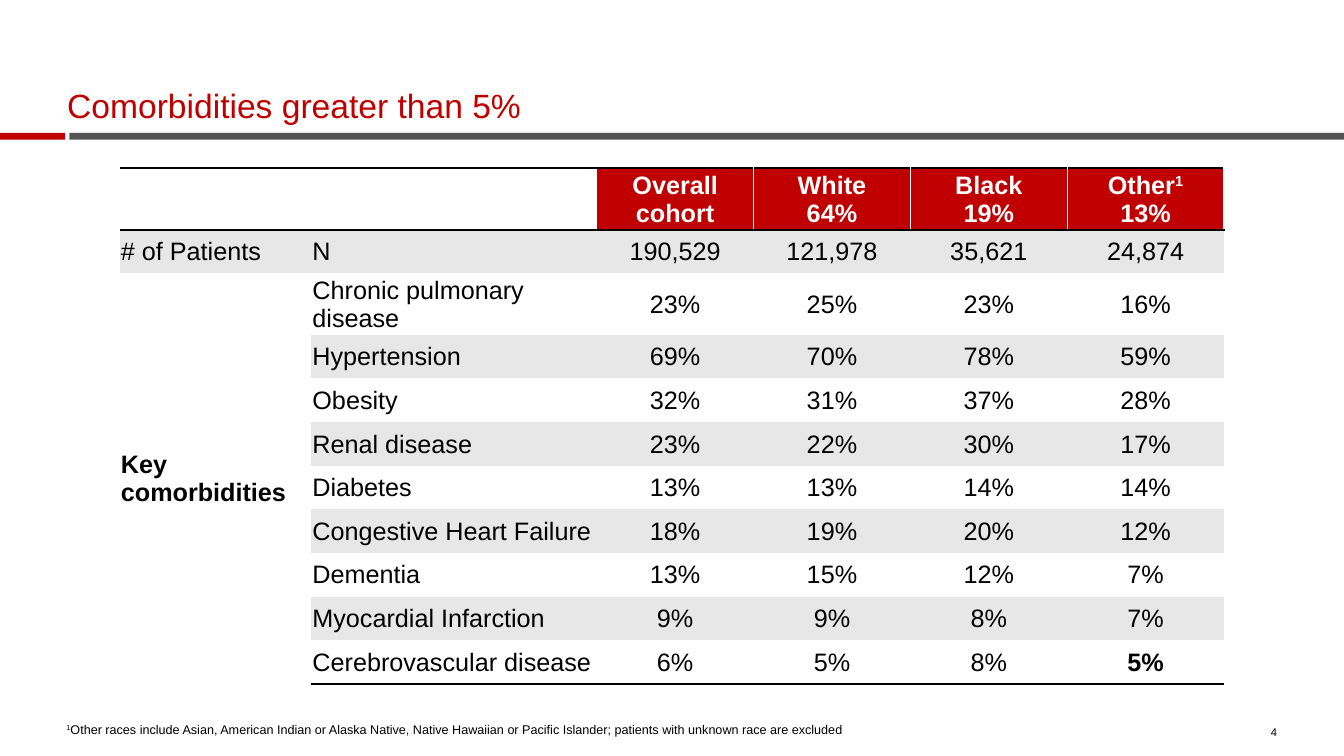
from lxml.etree import SubElement
from pptx import Presentation
from pptx.dml.color import RGBColor
from pptx.enum.shapes import MSO_SHAPE as Shape
from pptx.enum.text import MSO_ANCHOR as Anchor, PP_ALIGN as Align
from pptx.oxml.ns import qn
from pptx.util import Pt

RED, GRAY, BAND, BLACK, WHITE = "C00000", "535353", "E7E7E7", "000000", "FFFFFF"
NO_STYLE_NO_GRID = "{2D5ABB26-0587-4C30-8999-92F81FD0307C}"

COLUMN_WIDTHS = [136.8, 203.8, 112, 112, 112, 112]
TALL_ROW, ROW = 42.7, 31.16
ROWS = [
    ["", "", "Overall cohort", "White\n64%", "Black\n19%", "Other^1^\n13%"],
    ["# of Patients", "N", "190,529", "121,978", "35,621", "24,874"],
    ["Key comorbidities", "Chronic pulmonary disease", "23%", "25%", "23%", "16%"],
    ["", "Hypertension", "69%", "70%", "78%", "59%"],
    ["", "Obesity", "32%", "31%", "37%", "28%"],
    ["", "Renal disease", "23%", "22%", "30%", "17%"],
    ["", "Diabetes", "13%", "13%", "14%", "14%"],
    ["", "Congestive Heart Failure", "18%", "19%", "20%", "12%"],
    ["", "Dementia", "13%", "15%", "12%", "7%"],
    ["", "Myocardial Infarction", "9%", "9%", "8%", "7%"],
    ["", "Cerebrovascular disease", "6%", "5%", "8%", "5%"],
]
TALL_ROWS = {0, 2}
LAST_ROW, LAST_COLUMN = len(ROWS) - 1, len(COLUMN_WIDTHS) - 1
BOLD_CELLS = {(2, 0), (LAST_ROW, LAST_COLUMN)}


def color(hex_string):
    return RGBColor.from_string(hex_string)


def write_text(frame, text, size, hex_string, align=Align.LEFT, bold=False, spacing=None):
    """Write one paragraph a line; text between carets is superscript."""
    for index, line in enumerate(text.split("\n")):
        paragraph = frame.add_paragraph() if index else frame.paragraphs[0]
        paragraph.alignment = align
        paragraph.line_spacing = spacing
        font = paragraph.font
        font.name, font.size, font.bold = "Arial", Pt(size), bold
        font.color.rgb = color(hex_string)
        for position, part in enumerate(line.split("^")):
            if part:
                run = paragraph.add_run()
                run.text = part
                if position % 2:
                    run._r.get_or_add_rPr().set("baseline", "30000")


def add_bar(slide, left, width, hex_string):
    bar = slide.shapes.add_shape(Shape.RECTANGLE, Pt(left), Pt(95), Pt(width), Pt(4.8))
    bar.shadow.inherit = False
    bar.fill.solid()
    bar.fill.fore_color.rgb = color(hex_string)
    bar.line.fill.background()


def add_text(slide, left, top, width, height, text, size, hex_string,
             anchor=Anchor.TOP, **paragraph_options):
    box = slide.shapes.add_textbox(Pt(left), Pt(top), Pt(width), Pt(height))
    frame = box.text_frame
    frame.word_wrap = True
    frame.vertical_anchor = anchor
    frame.margin_left = frame.margin_right = frame.margin_top = frame.margin_bottom = 0
    write_text(frame, text, size, hex_string, **paragraph_options)


def add_border(cell, side, width, hex_string):
    line = SubElement(cell._tc.get_or_add_tcPr(), qn(f"a:ln{side}"), w=str(Pt(width)))
    fill = SubElement(line, qn("a:solidFill"))
    SubElement(fill, qn("a:srgbClr"), val=hex_string)


def add_cell_borders(cell, row, column):
    """Add borders in the order the schema wants: left, right, top, bottom."""
    if row == 0:
        if column > 2:
            add_border(cell, "L", 1, WHITE)
        if 2 <= column < LAST_COLUMN:
            add_border(cell, "R", 1, WHITE)
        add_border(cell, "T", 2, BLACK)
    if row in (0, LAST_ROW):
        add_border(cell, "B", 2, BLACK)


def cell_fill(row, column):
    if row == 0:
        return RED if column >= 2 else WHITE
    return BAND if row % 2 and (column or row == 1) else WHITE


def fill_cell(cell, row, column, text):
    cell.margin_left = cell.margin_right = cell.margin_top = Pt(0.7)
    cell.margin_bottom = 0
    cell.vertical_anchor = Anchor.MIDDLE
    add_cell_borders(cell, row, column)
    cell.fill.solid()
    cell.fill.fore_color.rgb = color(cell_fill(row, column))
    write_text(cell.text_frame, text, 18, BLACK if row else WHITE,
               align=Align.CENTER if column >= 2 else Align.LEFT,
               bold=row == 0 or (row, column) in BOLD_CELLS)


def add_comorbidity_table(slide):
    heights = [TALL_ROW if row in TALL_ROWS else ROW for row in range(len(ROWS))]
    frame = slide.shapes.add_table(len(ROWS), len(COLUMN_WIDTHS), Pt(85.7), Pt(120.2),
                                   Pt(sum(COLUMN_WIDTHS)), Pt(sum(heights)))
    table = frame.table
    table.first_row = table.horz_banding = False
    table._tbl.tblPr.find(qn("a:tableStyleId")).text = NO_STYLE_NO_GRID
    for column, width in zip(table.columns, COLUMN_WIDTHS):
        column.width = Pt(width)
    for row, height in zip(table.rows, heights):
        row.height = Pt(height)
    for row, texts in enumerate(ROWS):
        for column, text in enumerate(texts):
            fill_cell(table.cell(row, column), row, column, text)
    table.cell(0, 0).merge(table.cell(0, 1))
    table.cell(2, 0).merge(table.cell(LAST_ROW, 0))


def main():
    presentation = Presentation()
    presentation.slide_width, presentation.slide_height = Pt(960), Pt(540)
    slide = presentation.slides.add_slide(presentation.slide_layouts[6])
    add_bar(slide, 49.5, 910.5, GRAY)
    add_bar(slide, 0, 46.5, RED)
    add_text(slide, 886.3, 519, 25.9, 9, "4", 8, BLACK, align=Align.RIGHT, spacing=0.9)
    add_text(slide, 48, 36.7, 864, 53.3, "Comorbidities greater than 5%", 24, RED,
             anchor=Anchor.BOTTOM, spacing=0.9)
    add_comorbidity_table(slide)
    add_text(slide, 47.5, 515.5, 781, 11,
             "^1^Other races include Asian, American Indian or Alaska Native, Native Hawaiian "
             "or Pacific Islander; patients with unknown race are excluded", 9, BLACK)
    presentation.save("out.pptx")


if __name__ == "__main__":
    main()
